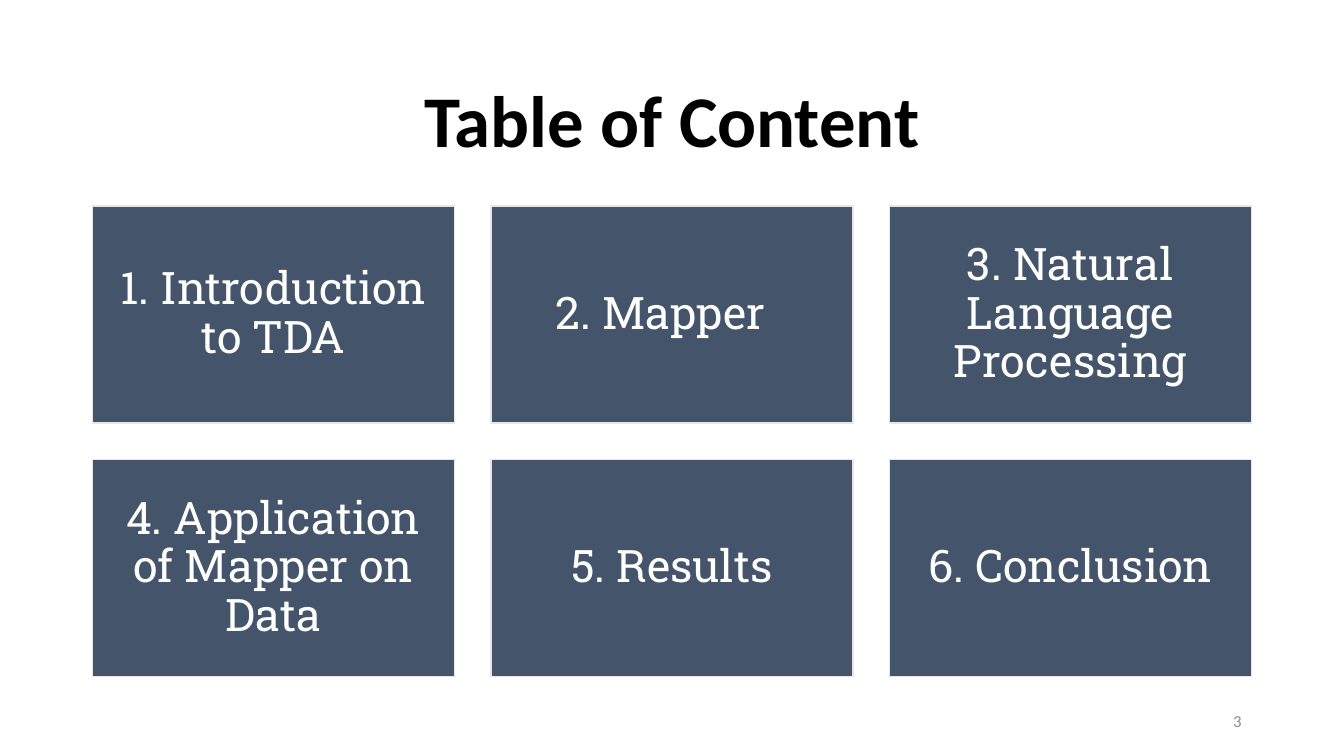
import pptx
import pptx.util
import pptx.dml.color
import pptx.enum.shapes
import pptx.enum.text
from dataclasses import dataclass

Pt = pptx.util.Pt
RGB = pptx.dml.color.RGBColor.from_string
ALIGN = pptx.enum.text.PP_ALIGN

TITLE = "Table of Content"
TOPICS = [
    "1. Introduction to TDA",
    "2. Mapper  ",
    "3. Natural Language Processing",
    "4. Application of Mapper on Data",
    "5. Results",
    "6. Conclusion",
]
PAGE_NUMBER = "3"


@dataclass(frozen=True)
class Theme:
    ink: str = "000000"
    card: str = "44546A"
    card_line: str = "E7E6E6"
    card_text: str = "FFFFFF"
    muted: str = "8C8C8C"
    body_font: str = "Calibri"
    card_font: str = "Roboto Slab"
    title_size: float = 52
    card_size: float = 32
    number_size: float = 12


THEME = Theme()

PAGE_WIDTH, PAGE_HEIGHT = 960, 540
MARGIN = 66
CONTENT_WIDTH = PAGE_WIDTH - 2 * MARGIN
COLUMNS = 3
GAP_RATIO = 0.1
CARD_WIDTH = CONTENT_WIDTH / (COLUMNS + (COLUMNS - 1) * GAP_RATIO)
CARD_HEIGHT = CARD_WIDTH * 0.6
GAP = CARD_WIDTH * GAP_RATIO
CARDS_TOP = 147
CARD_INSET = 9.6


def write(box, text, *, size, color, font, bold=False, align=ALIGN.CENTER,
          line_spacing=1.0, inset=None):
    frame = box.text_frame
    frame.word_wrap = True
    frame.vertical_anchor = pptx.enum.text.MSO_ANCHOR.MIDDLE
    if inset is not None:
        frame.margin_left = frame.margin_right = Pt(inset)
        frame.margin_top = frame.margin_bottom = Pt(inset)
    para = frame.paragraphs[0]
    para.alignment = align
    para.line_spacing = line_spacing
    span = para.add_run()
    span.text = text
    span.font.size = Pt(size)
    span.font.name = font
    span.font.bold = bold
    span.font.color.rgb = RGB(color)


def add_card(page, index, topic):
    row, column = divmod(index, COLUMNS)
    card = page.shapes.add_shape(
        pptx.enum.shapes.MSO_SHAPE.RECTANGLE,
        Pt(MARGIN + column * (CARD_WIDTH + GAP)),
        Pt(CARDS_TOP + row * (CARD_HEIGHT + GAP)),
        Pt(CARD_WIDTH), Pt(CARD_HEIGHT))
    card.shadow.inherit = False
    card.fill.solid()
    card.fill.fore_color.rgb = RGB(THEME.card)
    card.line.color.rgb = RGB(THEME.card_line)
    card.line.width = Pt(1)
    write(card, topic, size=THEME.card_size, color=THEME.card_text,
          font=THEME.card_font, line_spacing=0.9, inset=CARD_INSET)


def main():
    deck = pptx.Presentation()
    deck.slide_width, deck.slide_height = Pt(PAGE_WIDTH), Pt(PAGE_HEIGHT)
    page = deck.slides.add_slide(deck.slide_layouts[6])

    title = page.shapes.add_textbox(Pt(MARGIN), Pt(44), Pt(CONTENT_WIDTH), Pt(89))
    write(title, TITLE, size=THEME.title_size, color=THEME.ink,
          font=THEME.body_font, bold=True, line_spacing=0.9)

    for index, topic in enumerate(TOPICS):
        add_card(page, index, topic)

    number_width = 216
    number = page.shapes.add_textbox(
        Pt(PAGE_WIDTH - MARGIN - number_width), Pt(500.5), Pt(number_width), Pt(28.75))
    write(number, PAGE_NUMBER, size=THEME.number_size, color=THEME.muted,
          font=THEME.body_font, align=ALIGN.RIGHT)

    deck.save("out.pptx")


if __name__ == "__main__":
    main()
